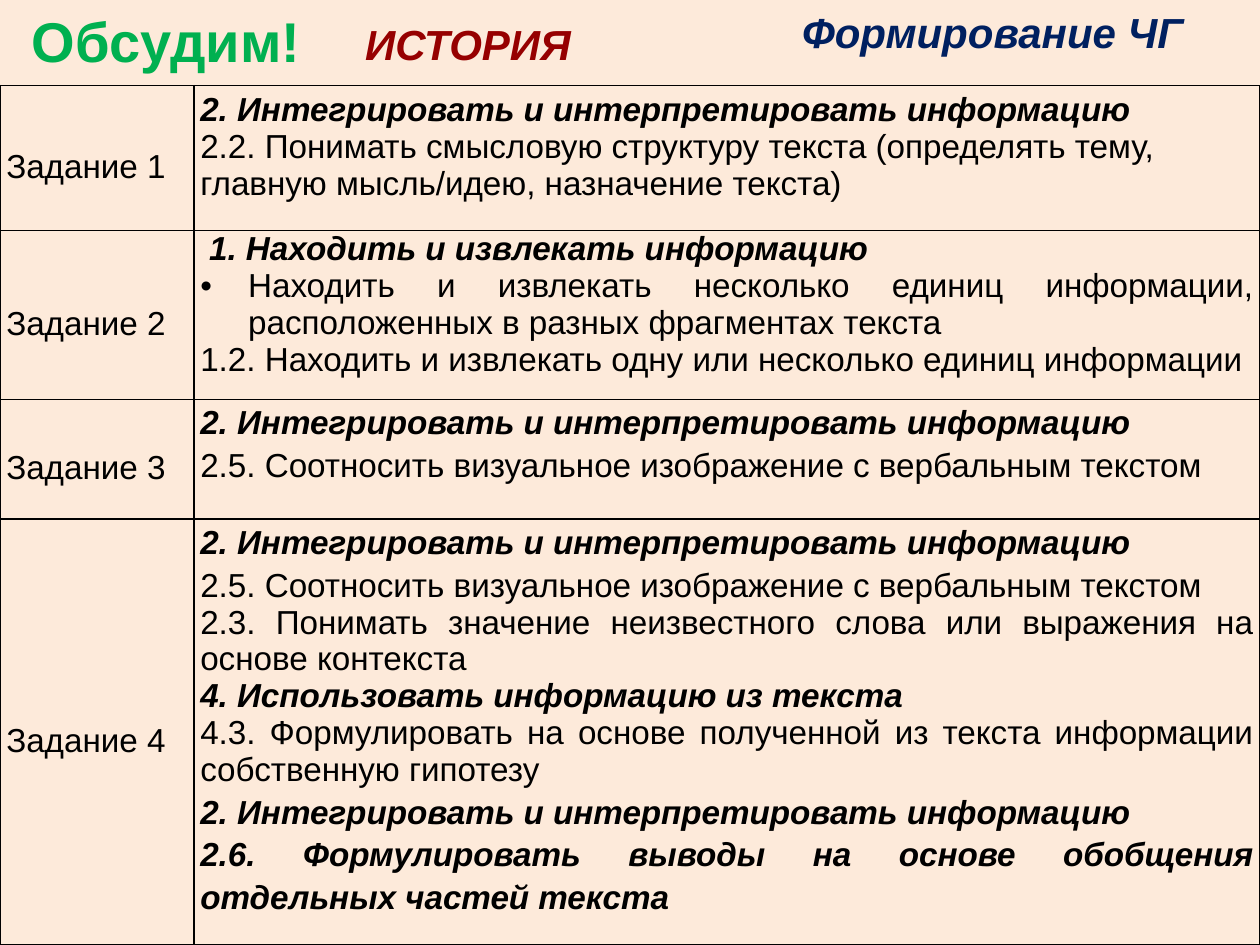
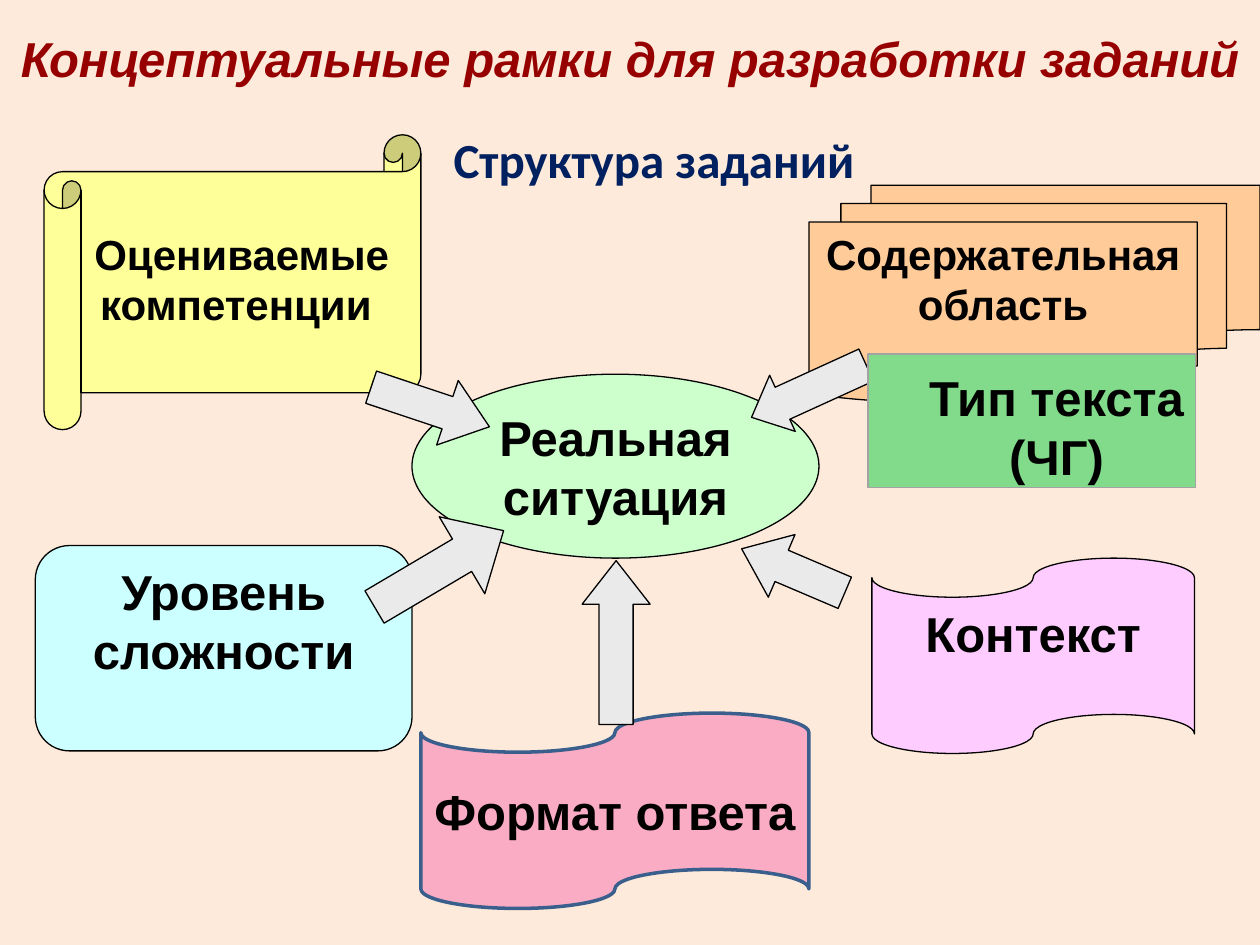
from lxml import etree
from pptx import Presentation
from pptx import util as u
from pptx.dml.color import RGBColor
from pptx.enum import shapes, text
from pptx.oxml.ns import qn

COLOURS = {
    "page": "FDEADA", "black": "000000", "navy": "002060", "maroon": "960000",
    "green": "00B050", "arrow": "EAEAEA", "aqua": "CCFFFF", "mint": "CCFFCC",
    "peach": "FFCC99", "lilac": "FFCCFF", "yellow": "FFFF99", "pink": "FAACC4",
    "pink edge": "3A5F8C", "leaf": "81DB8A", "leaf edge": "A3A3A3",
}
LEFT, CENTRE, RIGHT, JUSTIFY = (text.PP_ALIGN.LEFT, text.PP_ALIGN.CENTER,
                                text.PP_ALIGN.RIGHT, text.PP_ALIGN.JUSTIFY)
TOP, MIDDLE = text.MSO_ANCHOR.TOP, text.MSO_ANCHOR.MIDDLE
KIND = shapes.MSO_SHAPE
TITLE_ONLY, BLANK = 5, 6

# Slide 1: words, place, alignment, font
HEADINGS = [
    ("Формирование ЧГ", (6.18, 0, 3.31, 0.52), RIGHT,
     dict(size=24, colour="navy", bold=True, italic=True)),
    ("ИСТОРИЯ", (2.8, 0.1, 2.99, 0.5), LEFT,
     dict(size=24, colour="maroon", bold=True, italic=True)),
    ("Обсудим!", (0, 0, 2.64, 0.64), CENTRE,
     dict(size=32, colour="green", bold=True)),
]

# Paragraph styles of the skills column
STRONG = dict(bold=True, align=JUSTIFY, spacing=1.15)
STRONG_TIGHT = dict(bold=True, align=LEFT)
STRONG_INDENT = dict(bold=True, align=LEFT, left=0.07)
PLAIN = dict(align=LEFT)
PLAIN_LOOSE = dict(align=LEFT, spacing=1.15)
PLAIN_JUSTIFY = dict(align=JUSTIFY)
BULLET = dict(align=JUSTIFY, left=0.38, first=-0.38, bullet="•")

INTEGRATE = ("2. Интегрировать и интерпретировать информацию", STRONG)
MATCH_IMAGE = ("2.5. Соотносить визуальное изображение с вербальным текстом",
               PLAIN_LOOSE)
TABLE_PLACE = (0, 0.68, 10, 6.82)
COLUMN_WIDTHS = [1.54, 8.46]
TASKS = [
    (1.15, [
        INTEGRATE,
        ("2.2. Понимать смысловую структуру текста (определять тему, "
         "главную мысль/идею, назначение текста)", PLAIN),
    ]),
    (1.34, [
        ("1. Находить и извлекать информацию", STRONG_INDENT),
        ("Находить и извлекать несколько единиц информации, "
         "расположенных в разных фрагментах текста", BULLET),
        ("1.2. Находить и извлекать одну или несколько единиц информации",
         PLAIN_JUSTIFY),
    ]),
    (0.95, [INTEGRATE, MATCH_IMAGE]),
    (3.38, [
        INTEGRATE,
        MATCH_IMAGE,
        ("2.3. Понимать значение неизвестного слова или выражения "
         "на основе контекста", PLAIN_JUSTIFY),
        ("4. Использовать информацию из текста", STRONG_TIGHT),
        ("4.3. Формулировать на основе полученной из текста информации "
         "собственную гипотезу", PLAIN_JUSTIFY),
        INTEGRATE,
        ("2.6. Формулировать выводы на основе обобщения отдельных "
         "частей текста", STRONG),
    ]),
]

# Slide 2
FRAME_TITLE = "Концептуальные рамки для разработки заданий"
STRUCTURE = "Структура заданий"
FRAME_PARTS = [
    dict(kind=KIND.FLOWCHART_ALTERNATE_PROCESS, place=(0.28, 4.33, 2.99, 1.63),
         fill="aqua", words="Уровень сложности"),
    dict(kind=KIND.OVAL, place=(3.27, 2.97, 3.23, 1.46),
         fill="mint", words="Реальная ситуация"),
    dict(kind=KIND.FLOWCHART_MULTIDOCUMENT, place=(6.42, 1.47, 3.58, 1.72),
         fill="peach", words="Содержательная область", size=24),
    dict(kind=KIND.FLOWCHART_PUNCHED_TAPE, place=(6.92, 4.43, 2.56, 1.55),
         fill="lilac", words="Контекст"),
    dict(kind=KIND.HORIZONTAL_SCROLL, place=(0.35, 1.07, 2.99, 2.34),
         fill="yellow", words="Оцениваемые компетенции ", size=24,
         adjust=[0.125], margins=(0.1, 0.45, 0.1, 0.05)),
    dict(kind=KIND.RIGHT_ARROW, place=(2.89, 4.16, 1.19, 0.71),
         turn=329.4, adjust=[0.42, 0.54]),
    dict(kind=KIND.RIGHT_ARROW, place=(2.92, 2.96, 0.99, 0.54),
         turn=18.5, adjust=[0.5, 0.65]),
    dict(kind=KIND.LEFT_ARROW, place=(5.92, 2.86, 1, 0.49),
         turn=335.5, adjust=[0.57, 0.55]),
    dict(kind=KIND.FLOWCHART_PUNCHED_TAPE, place=(3.34, 5.66, 3.08, 1.55),
         fill="pink", edge="pink edge", weight=2, words="Формат ответа",
         anchor=MIDDLE),
    dict(kind=KIND.LEFT_ARROW, place=(4.24, 4.83, 1.3, 0.54),
         turn=90, adjust=[0.5, 0.64]),
    dict(kind=KIND.LEFT_ARROW, place=(5.85, 4.26, 0.89, 0.54),
         turn=23.1, adjust=[0.5, 0.64]),
]
TEXT_TYPE = dict(kind=KIND.RECTANGLE, place=(6.89, 2.81, 2.6, 1.06),
                 fill="leaf", edge="leaf edge", weight=0.85,
                 words="Тип текста (ЧГ)", margins=(0, 0.11, 0, 0),
                 layout=dict(left=0.39, before=8.1))


def rgb(name):
    return RGBColor.from_string(COLOURS[name])


def inches(values):
    return [u.Inches(value) for value in values]


def set_margins(target, margins):
    for side, value in zip(("left", "top", "right", "bottom"), margins):
        setattr(target, f"margin_{side}", u.Inches(value))


def write(para, words, align=LEFT, spacing=None, before=0, left=0, first=0,
          bullet=None, size=28, colour="black", bold=False, italic=False,
          name="Arial"):
    """Put one formatted run into a paragraph."""
    span = para.add_run()
    span.text = words
    font_format = dict(size=u.Pt(size), bold=bold, italic=italic, name=name)
    for key, value in font_format.items():
        setattr(span.font, key, value)
    span.font.color.rgb = rgb(colour)
    para_format = dict(alignment=align, space_before=u.Pt(before))
    if spacing:
        para_format["line_spacing"] = spacing
    for key, value in para_format.items():
        setattr(para, key, value)
    properties = para._p.get_or_add_pPr()
    if left:
        properties.set("marL", str(u.Inches(left)))
        properties.set("indent", str(u.Inches(first)))
    if bullet:
        etree.SubElement(properties, qn("a:buFont"), typeface="Arial")
        etree.SubElement(properties, qn("a:buChar"), char=bullet)


def add_slide(deck, layout):
    slide = deck.slides.add_slide(deck.slide_layouts[layout])
    slide.background.fill.solid()
    slide.background.fill.fore_color.rgb = rgb("page")
    return slide


def add_text(slide, words, place, margins=(0.1, 0.05, 0.1, 0.05), **style):
    frame = slide.shapes.add_textbox(*inches(place)).text_frame
    frame.word_wrap = True
    set_margins(frame, margins)
    write(frame.paragraphs[0], words, **style)


def add_part(slide, kind, place, fill="arrow", edge="black", weight=0.75,
             words=None, size=28, turn=0, adjust=(), anchor=TOP,
             margins=(0.1, 0.05, 0.1, 0.05), layout=None):
    part = slide.shapes.add_shape(kind, *inches(place))
    part.shadow.inherit = False
    part.rotation = turn
    for index, value in enumerate(adjust):
        part.adjustments[index] = value
    part.fill.solid()
    part.fill.fore_color.rgb = rgb(fill)
    part.line.color.rgb = rgb(edge)
    part.line.width = u.Pt(weight)
    if words:
        frame = part.text_frame
        frame.word_wrap = True
        frame.vertical_anchor = anchor
        set_margins(frame, margins)
        write(frame.paragraphs[0], words, align=CENTRE, size=size, bold=True,
              **(layout or {}))


def add_borders(cell):
    properties = cell._tc.get_or_add_tcPr()
    for index, side in enumerate(("lnL", "lnR", "lnT", "lnB")):
        line = etree.Element(qn(f"a:{side}"), w=str(u.Pt(1)))
        fill = etree.SubElement(line, qn("a:solidFill"))
        etree.SubElement(fill, qn("a:srgbClr"), val=COLOURS["black"])
        properties.insert(index, line)


def fill_cell(cell, paragraphs, anchor):
    cell.fill.background()
    cell.vertical_anchor = anchor
    set_margins(cell, (0.05, 0, 0.05, 0))
    add_borders(cell)
    frame = cell.text_frame
    for index, (words, style) in enumerate(paragraphs):
        para = frame.add_paragraph() if index else frame.paragraphs[0]
        write(para, words, size=19, italic=style.get("bold", False), **style)


def build_tasks(deck):
    slide = add_slide(deck, BLANK)
    table = slide.shapes.add_table(len(TASKS), len(COLUMN_WIDTHS),
                                   *inches(TABLE_PLACE)).table
    table.first_row = table.horz_banding = False
    for column, width in zip(table.columns, COLUMN_WIDTHS):
        column.width = u.Inches(width)
    for index, (height, skills) in enumerate(TASKS):
        table.rows[index].height = u.Inches(height)
        label = [(f"Задание {index + 1}", dict(spacing=1.5))]
        fill_cell(table.cell(index, 0), label, MIDDLE)
        fill_cell(table.cell(index, 1), skills, TOP)
    for words, place, align, font in HEADINGS:
        add_text(slide, words, place, align=align, **font)


def build_frame(deck):
    slide = add_slide(deck, TITLE_ONLY)
    title = slide.shapes.title
    title.left, title.top, title.width, title.height = inches((0, 0, 10, 0.92))
    title.text_frame.vertical_anchor = MIDDLE
    write(title.text_frame.paragraphs[0], FRAME_TITLE, align=CENTRE,
          colour="maroon", bold=True, italic=True)
    for part in FRAME_PARTS:
        add_part(slide, **part)
    add_text(slide, STRUCTURE, (2.32, 0.99, 5.74, 0.56),
             margins=(0.08, 0.04, 0.08, 0.04), align=CENTRE, colour="navy",
             bold=True, name="Calibri")
    add_part(slide, **TEXT_TYPE)


def main():
    deck = Presentation()
    deck.slide_width, deck.slide_height = inches((10, 7.5))
    build_tasks(deck)
    build_frame(deck)
    deck.save("out.pptx")


if __name__ == "__main__":
    main()
